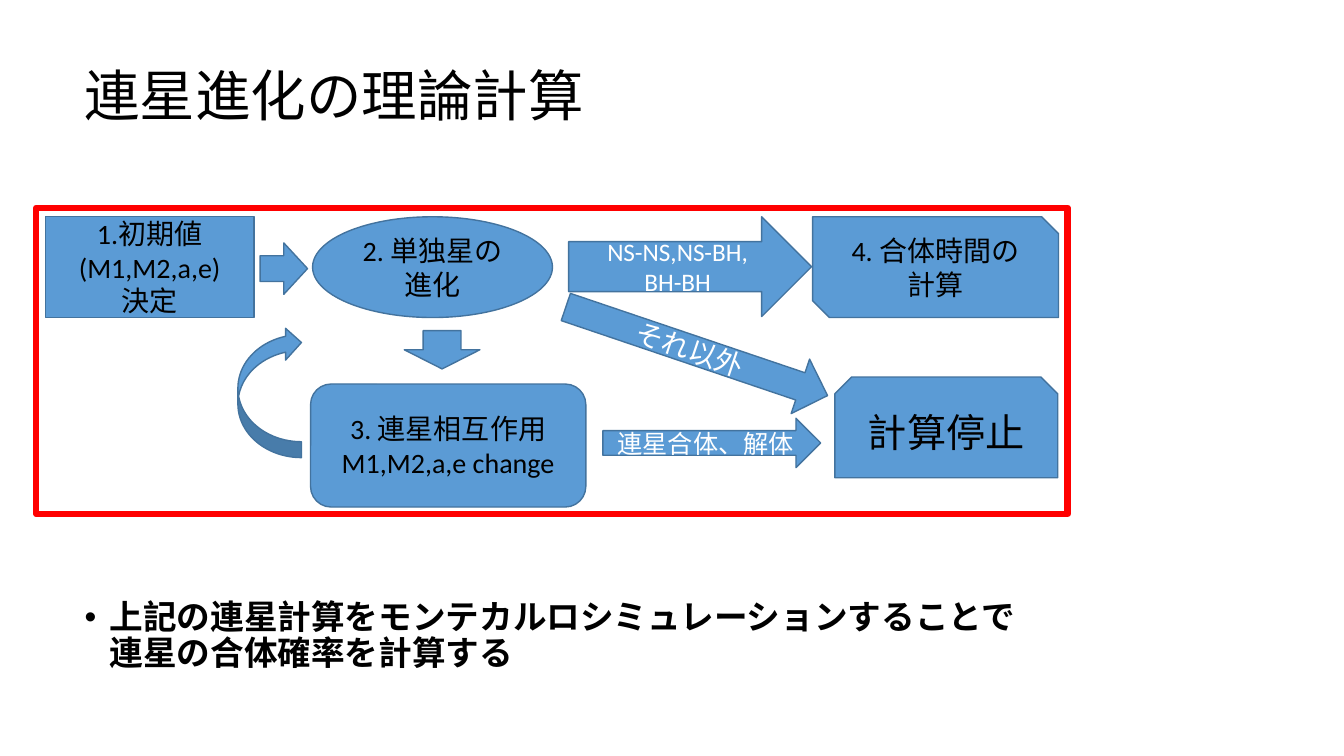
from lxml.etree import SubElement
from pptx import Presentation
from pptx.dml.color import RGBColor
from pptx.enum.shapes import MSO_SHAPE as Shape
from pptx.enum.text import MSO_ANCHOR as Anchor, PP_ALIGN as Align
from pptx.oxml.ns import qn
from pptx.util import Inches, Pt

BLACK, WHITE, BLUE, EDGE, RED = "000000", "FFFFFF", "5B9BD5", "43739E", "FF0000"

deck = Presentation()
deck.slide_width, deck.slide_height = Inches(13.33), Inches(7.5)
page = deck.slides.add_slide(deck.slide_layouts[6])


def place(left, top, width, height):
    """Turn percentages of the slide's width and height into lengths."""
    across, down = deck.slide_width / 100, deck.slide_height / 100
    return [round(n) for n in (left * across, top * down, width * across, height * down)]


def write(box, lines, size, color, align, bold=False):
    """Fill a box with one paragraph per line and return its last paragraph."""
    frame = box.text_frame
    frame.word_wrap = True
    for number, line in enumerate(lines):
        para = frame.add_paragraph() if number else frame.paragraphs[0]
        para.alignment = align
        span = para.add_run()
        span.text = line
        span.font.name = "Calibri"
        span.font.size = Pt(size)
        span.font.bold = bold
        span.font.color.rgb = RGBColor.from_string(color)
    return para


# Title and conclusion
title = page.shapes.add_textbox(*place(5.55, 8, 70.52, 10.13))
title.text_frame.vertical_anchor = Anchor.MIDDLE
heading = write(title, ["連星進化の理論計算"], 39.6, BLACK, Align.LEFT)
heading.line_spacing = 0.9

conclusion = page.shapes.add_textbox(*place(5.55, 78.8, 72.77, 18.13))
point = write(conclusion, ["上記の連星計算をモンテカルロシミュレーションすることで連星の合体確率を計算する"],
              24, BLACK, Align.LEFT, bold=True)
point.line_spacing = 0.9
point.space_before = Pt(10)
props = point._p.get_or_add_pPr()
props.set("marL", str(Inches(0.25)))
props.set("indent", str(-Inches(0.25)))
SubElement(props, qn("a:buFont")).set("typeface", "Arial")
SubElement(props, qn("a:buChar")).set("char", "•")

# Flow chart: kind, left, top, width, height, rotation, lines, size, text colour
TOP, TALL = 28.67, 13.33
steps = [
    (Shape.RECTANGLE, 3.38, TOP, 15.53, TALL, 0, ["1.初期値(M1,M2,a,e)", "決定"], 20, BLACK),
    (Shape.OVAL, 23.26, TOP, 17.85, TALL, 0, ["2. 単独星の進化"], 20, BLACK),
    (Shape.ROUNDED_RECTANGLE, 23.11, 50.8, 20.48, 16.27, 0,
     ["3. 連星相互作用", "M1,M2,a,e change"], 20, BLACK),
    (Shape.DOWN_ARROW, 30.08, 43.73, 5.63, 5.07, 0, [], 20, BLACK),
    (Shape.RIGHT_ARROW, 19.35, 32.13, 3.53, 6.8, 0, [], 20, BLACK),
    (Shape.RIGHT_ARROW, 44.86, 55.33, 16.2, 6.53, 0, ["連星合体、解体"], 18, WHITE),
    (Shape.RIGHT_ARROW, 42.31, TOP, 18.08, 13.2, 0, ["NS-NS,NS-BH,", "BH-BH"], 18, WHITE),
    (Shape.SNIP_2_SAME_RECTANGLE, 62.12, 49.87, 16.58, TALL, 0, ["計算停止"], 28, BLACK),
    (Shape.RIGHT_ARROW, 41.56, 42.67, 20.56, 7.6, 18.7, ["それ以外"], 20, WHITE),
    (Shape.CURVED_LEFT_ARROW, 17.7, 43.2, 4.73, 17.33, 180, [], 20, BLACK),
    (Shape.SNIP_2_DIAG_RECTANGLE, 60.46, TOP, 18.3, TALL, 0, ["4. 合体時間の", "計算"], 20, BLACK),
]
for kind, left, top, width, height, rotation, lines, size, color in steps:
    step = page.shapes.add_shape(kind, *place(left, top, width, height))
    step.rotation = rotation
    step.shadow.inherit = False
    step.fill.solid()
    step.fill.fore_color.rgb = RGBColor.from_string(BLUE)
    step.line.color.rgb = RGBColor.from_string(EDGE)
    step.line.width = Pt(1)
    if lines:
        step.text_frame.vertical_anchor = Anchor.MIDDLE
        write(step, lines, size, color, Align.CENTER)

# Red frame around the flow chart
border = page.shapes.add_shape(Shape.RECTANGLE, *place(2.7, 27.47, 76.74, 40.53))
border.shadow.inherit = False
border.fill.background()
border.line.color.rgb = RGBColor.from_string(RED)
border.line.width = Pt(4.5)

deck.save("out.pptx")
